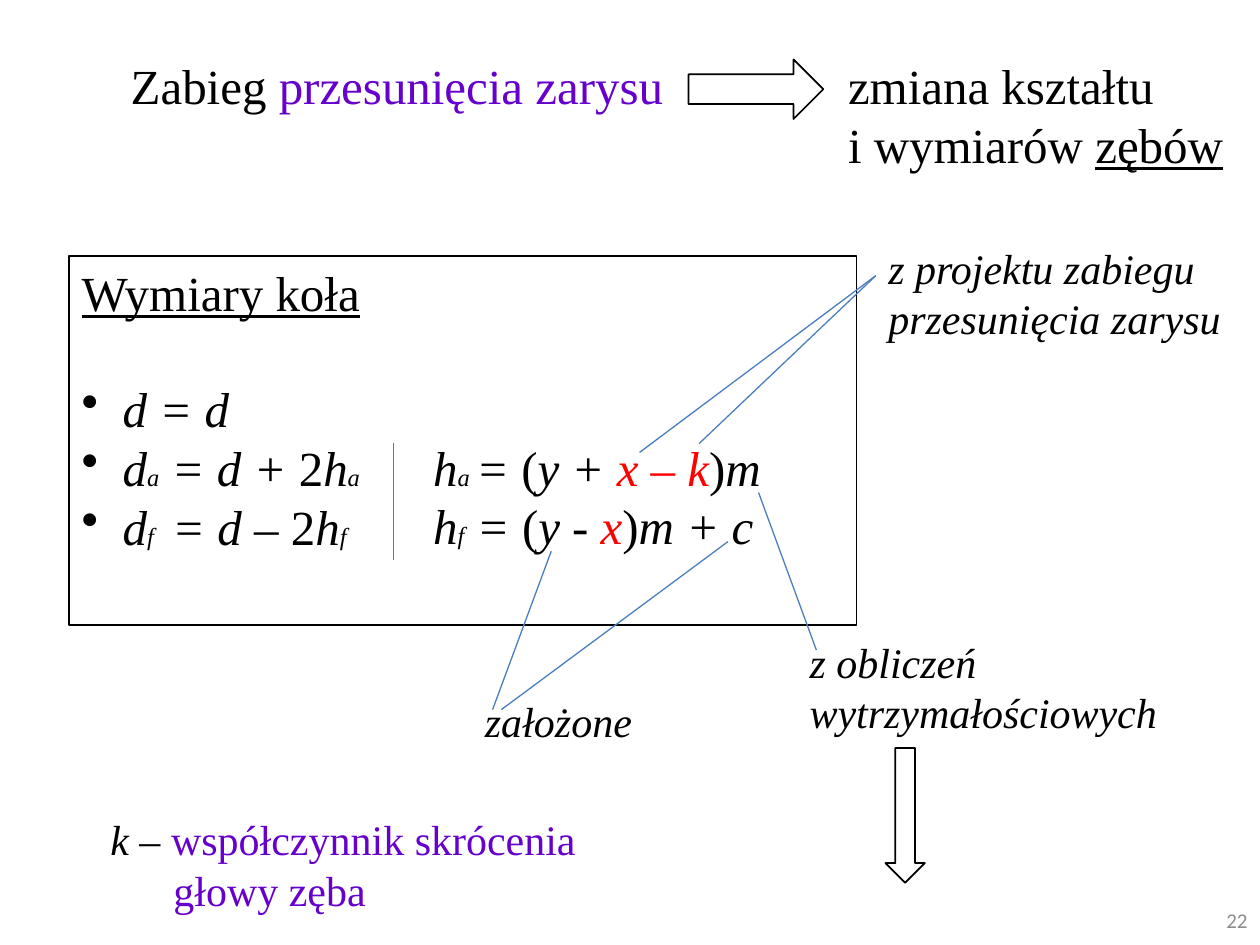
from lxml.etree import SubElement
from pptx import Presentation
from pptx.dml.color import RGBColor
from pptx.enum.shapes import MSO_CONNECTOR, MSO_SHAPE
from pptx.enum.text import MSO_ANCHOR, MSO_AUTO_SIZE, PP_ALIGN
from pptx.oxml.ns import qn
from pptx.util import Pt

BLACK = RGBColor(0x00, 0x00, 0x00)
WHITE = RGBColor(0xFF, 0xFF, 0xFF)
VIOLET = RGBColor(0x66, 0x00, 0xCC)
RED = RGBColor(0xFF, 0x00, 0x00)
BLUE = RGBColor(0x4B, 0x7E, 0xBC)
GRAY = RGBColor(0x8C, 0x8C, 0x8C)
SERIF = "Times New Roman"
BIG, MID, SUB = 28, 24, 14


def write(frame, rows, size, color=BLACK, face=SERIF, align=PP_ALIGN.LEFT):
    # style letters: i italic, u underline, s subscript size, v violet, r red
    frame.word_wrap = True
    frame.auto_size = MSO_AUTO_SIZE.NONE
    for n, row in enumerate(rows):
        para = frame.paragraphs[0] if n == 0 else frame.add_paragraph()
        para.alignment = align
        para.font.name = face
        para.font.size = Pt(size)
        para.font.color.rgb = color
        for text, style in row:
            run = para.add_run()
            run.text = text
            if "i" in style:
                run.font.italic = True
            if "u" in style:
                run.font.underline = True
            if "s" in style:
                run.font.size = Pt(SUB)
            if "v" in style:
                run.font.color.rgb = VIOLET
            if "r" in style:
                run.font.color.rgb = RED


def label(slide, box, rows, size, **look):
    frame = slide.shapes.add_textbox(*map(Pt, box)).text_frame
    write(frame, rows, size, **look)
    return frame


def shape(slide, kind, box, width):
    item = slide.shapes.add_shape(kind, *map(Pt, box))
    item.shadow.inherit = False
    item.line.color.rgb = BLACK
    item.line.width = Pt(width)
    item.fill.background()
    return item


def line(slide, start, end):
    item = slide.shapes.add_connector(
        MSO_CONNECTOR.STRAIGHT, *map(Pt, start + end))
    item.line.color.rgb = BLUE
    item.line.width = Pt(0.75)
    SubElement(item._element.spPr, qn("a:effectLst"))


def bullet(para, indent):
    props = para._p.get_or_add_pPr()
    props.set("marL", str(Pt(indent)))
    props.set("indent", str(-Pt(indent)))
    font = props.find(qn("a:defRPr"))
    mark = SubElement(props, qn("a:buChar"))
    mark.set("char", "•")
    if font is not None:
        font.addprevious(mark)


def heading(slide, x, y, w, h):
    title = slide.shapes.title
    title.left, title.top, title.width, title.height = map(Pt, (x, y, 325, h))
    title.text_frame.vertical_anchor = MSO_ANCHOR.TOP
    write(title.text_frame,
          [[("Zabieg ", ""), ("przesunięcia zarysu", "v")]], BIG)
    shape(slide, MSO_SHAPE.RIGHT_ARROW, (x + 326, y + 6, 77, 34), 1)
    label(slide, (x + 410, y, w - 410, h),
          [[("zmiana kształtu", "")],
           [("i wymiarów ", ""), ("zębów", "u")]], BIG)


def formulas(slide, x, y, w, h):
    panel = shape(slide, MSO_SHAPE.RECTANGLE, (x, y, w, h), 0.75)
    panel.fill.solid()
    panel.fill.fore_color.rgb = WHITE
    frame = panel.text_frame
    frame.vertical_anchor = MSO_ANCHOR.TOP
    write(frame, [
        [("Wymiary koła", "u")],
        [("d = d", "i")],
        [("d", "i"), ("a", "is"), (" = d + ", "i"), ("2", ""),
         ("h", "i"), ("a", "is")],
        [("d", "i"), ("f ", "is"), (" = d – ", "i"), ("2", ""),
         ("h", "i"), ("f", "is")],
    ], BIG)
    for para in frame.paragraphs[1:]:
        bullet(para, 23.5)
    frame.paragraphs[1].space_before = Pt(33)
    label(slide, (x + 201, y + 100, w - 201, 75), [
        [("h", "i"), ("a ", "is"), ("= ", "i"), ("(", ""), ("y + ", "i"),
         ("x – k", "ir"), (")", ""), ("m", "i")],
        [("h", "i"), ("f", "is"), (" = ", "i"), ("(", ""), ("y - ", "i"),
         ("x", "ir"), (")", ""), ("m + c", "i")],
    ], BIG)
    line(slide, (x + 185.5, y + 107), (x + 185.5, y + 174))


def callout(slide, box, rows, links):
    label(slide, box, [[(row, "i")] for row in rows], MID)
    for start, end in links:
        line(slide, start, end)


def legend(slide, x, y, w, h):
    frame = label(slide, (x, y, w, h), [
        [("k", "i"), (" – ", ""), ("współczynnik skrócenia", "v")],
        [("głowy zęba", "v")],
    ], MID)
    frame.paragraphs[1]._p.get_or_add_pPr().set("marL", str(Pt(36)))


def number(slide, x, y, w, h):
    frame = label(slide, (x, y, w, h), [[("22", "")]], 12,
                  color=GRAY, face="Calibri", align=PP_ALIGN.RIGHT)
    frame.vertical_anchor = MSO_ANCHOR.MIDDLE


def main():
    deck = Presentation()
    deck.slide_width, deck.slide_height = Pt(720), Pt(540)
    slide = deck.slides.add_slide(deck.slide_layouts[5])
    heading(slide, 67.5, 28, 652.5, 75)
    formulas(slide, 39.5, 146.25, 450, 211)
    callout(slide, (500.5, 135, 219.5, 65.5),
            ["z projektu zabiegu", "przesunięcia zarysu"],
            [((500.5, 157.5), (365.5, 258.5)),
             ((500.5, 157.5), (399.5, 253.5))])
    callout(slide, (270, 394, 101.5, 36), ["założone"],
            [((315, 315), (281.5, 405.5)), ((416, 309.5), (286.5, 405.5))])
    callout(slide, (455.5, 360, 219.5, 65.5),
            ["z obliczeń wytrzymałościowych"],
            [((433.5, 281.5), (466.5, 371.5))])
    shape(slide, MSO_SHAPE.DOWN_ARROW, (506, 427.5, 22.5, 77), 1)
    legend(slide, 56, 461.5, 376.5, 65.5)
    number(slide, 666, 511, 54, 29)
    deck.save("out.pptx")


if __name__ == "__main__":
    main()
